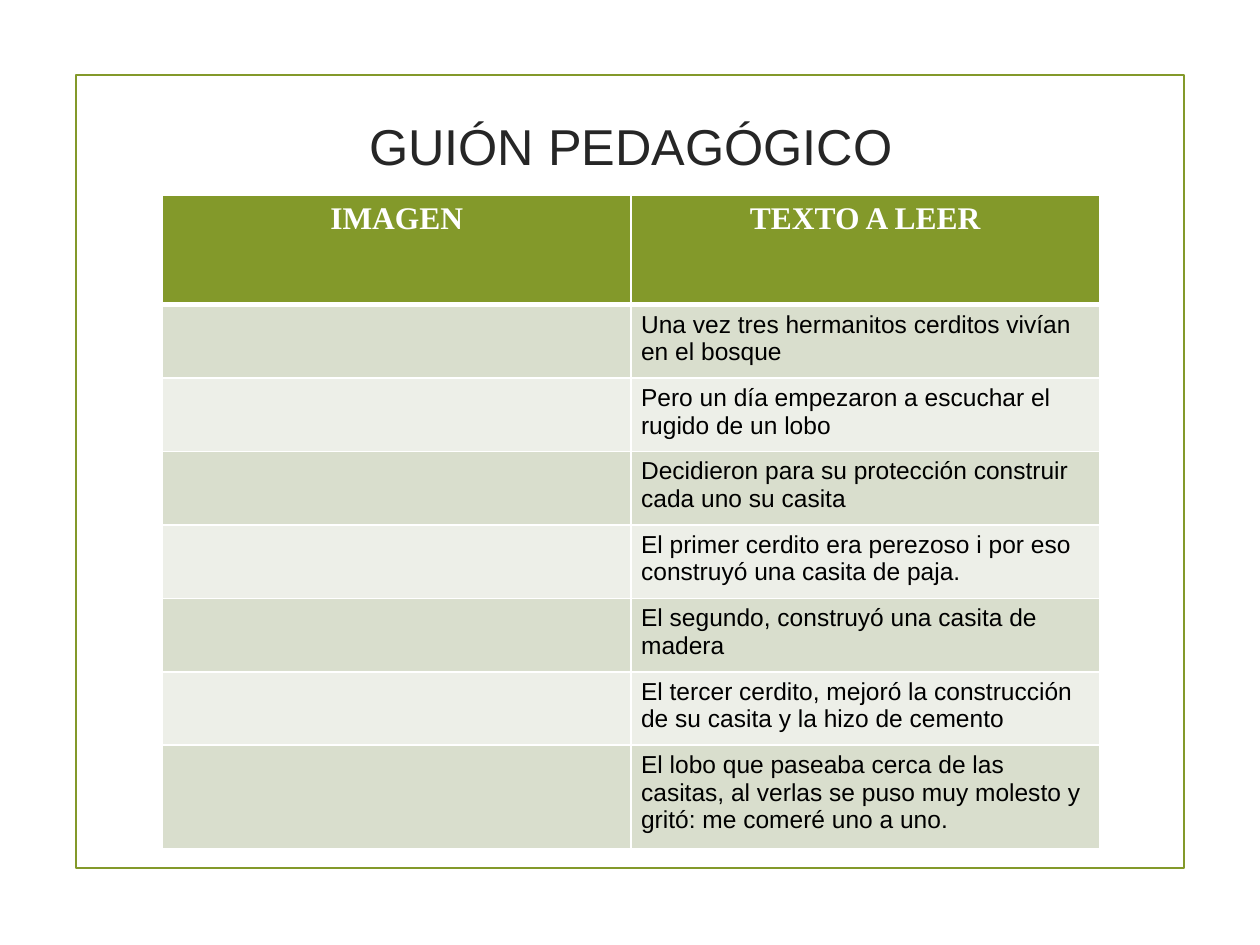
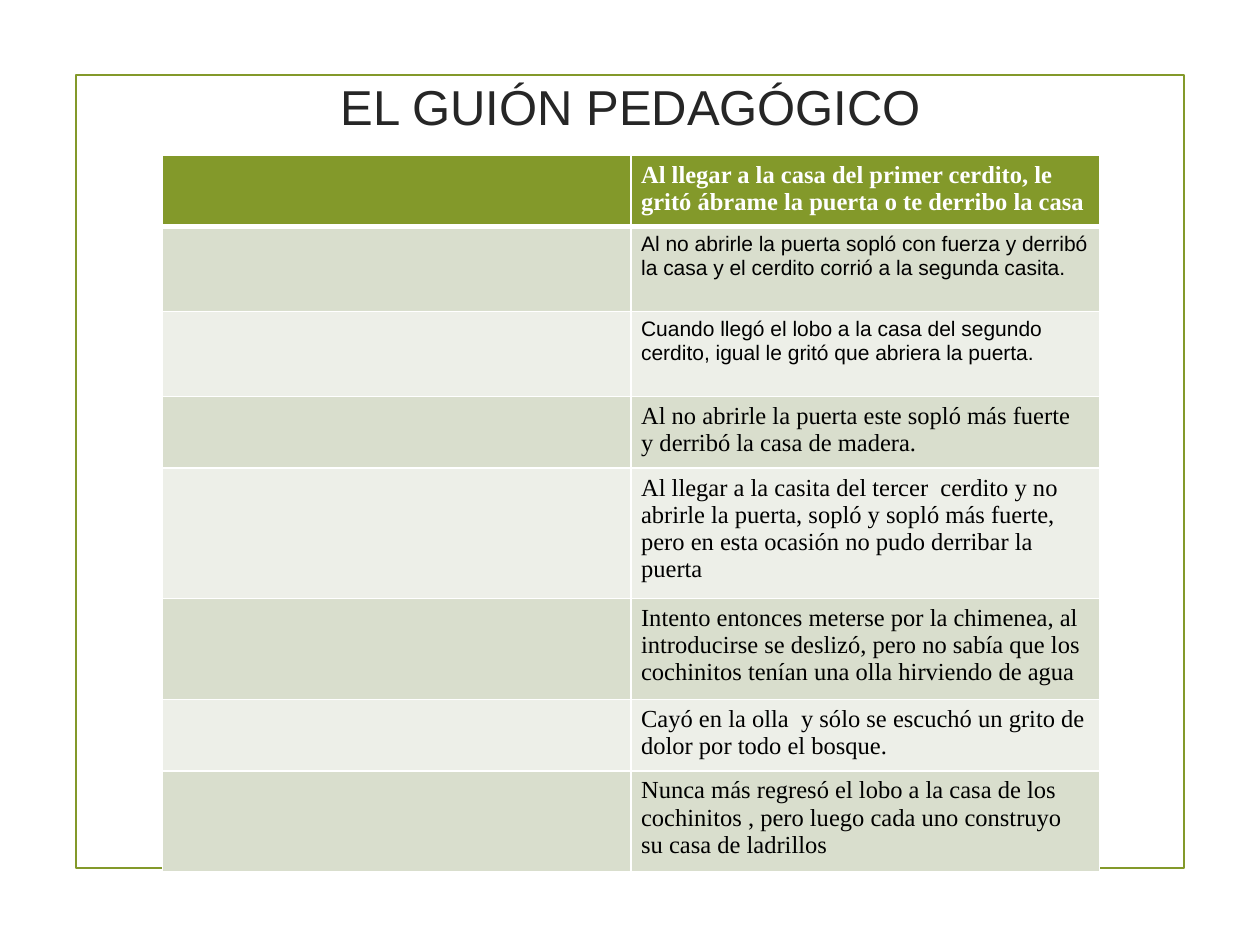
from lxml import etree
from pptx import Presentation
from pptx.dml.color import RGBColor
from pptx.enum.shapes import MSO_SHAPE
from pptx.enum.text import MSO_ANCHOR, PP_ALIGN
from pptx.oxml.ns import qn
from pptx.util import Pt

CENTER = PP_ALIGN.CENTER
LEFT = PP_ALIGN.LEFT
MIDDLE = MSO_ANCHOR.MIDDLE
RECTANGLE = MSO_SHAPE.RECTANGLE

GREEN = "83992A"
DARK_BAND = "D9DECD"
LIGHT_BAND = "EDEFE8"
WHITE = "FFFFFF"
BLACK = "000000"
TITLE_COLOR = "262626"
SANS = "Arial"
SERIF = "Times New Roman"

FRAME_BOX = (43.5, 42.75, 633, 453.25)
CONTENT_LEFT, CONTENT_WIDTH = 92.9, 535.4

SCRIPT_START = {
    "title": "GUIÓN PEDAGÓGICO",
    "title_size": 28.8,
    "title_top": 72,
    "title_height": 22.3,
    "table_top": 111.5,
    "heights": [62.5] + [42] * 6 + [59.2],
    "rows": [
        ("IMAGEN", "TEXTO A LEER", SERIF, 18, CENTER),
        ("", "Una vez tres hermanitos cerditos vivían en el bosque", SANS, 14, LEFT),
        ("", "Pero un día empezaron a escuchar el rugido de un lobo", SANS, 14, LEFT),
        ("", "Decidieron para su protección construir cada uno su casita", SANS, 14, LEFT),
        ("", "El primer cerdito era perezoso i por eso construyó una casita de paja.", SANS, 14, LEFT),
        ("", "El segundo, construyó una casita de madera", SANS, 14, LEFT),
        ("", "El tercer cerdito, mejoró la construcción de su casita y la hizo de cemento", SANS, 14, LEFT),
        ("", "El lobo que paseaba cerca de las casitas, al verlas se puso muy molesto y gritó: "
            "me comeré uno a uno.", SANS, 14, LEFT),
    ],
}

SCRIPT_END = {
    "title": "EL GUIÓN PEDAGÓGICO",
    "title_size": 28,
    "title_top": 20.9,
    "title_height": 79.2,
    "table_top": 88.6,
    "heights": [40.5, 48.6, 48.6, 40.5, 74.5, 57.2, 40.5, 57.2],
    "rows": [
        ("", "Al llegar a la casa del primer cerdito, le gritó ábrame la puerta o te derribo la casa",
         SERIF, 14, LEFT),
        ("", "Al no abrirle la puerta sopló con fuerza y derribó la casa y el cerdito corrió "
            "a la segunda casita.", SANS, 12, LEFT),
        ("", "Cuando llegó el lobo a la casa del segundo cerdito, igual le gritó que abriera la puerta.",
         SANS, 12, LEFT),
        ("", "Al no abrirle la puerta este sopló más fuerte y derribó la casa de madera.", SERIF, 14, LEFT),
        ("", "Al llegar a la casita del tercer  cerdito y no abrirle la puerta, sopló y sopló más fuerte, "
            "pero en esta ocasión no pudo derribar la puerta", SERIF, 14, LEFT),
        ("", "Intento entonces meterse por la chimenea, al introducirse se deslizó, pero no sabía que "
            "los cochinitos tenían una olla hirviendo de agua", SERIF, 14, LEFT),
        ("", "Cayó en la olla  y sólo se escuchó un grito de dolor por todo el bosque.", SERIF, 14, LEFT),
        ("", "Nunca más regresó el lobo a la casa de los cochinitos , pero luego cada uno construyo  "
            "su casa de ladrillos", SERIF, 14, LEFT),
    ],
}


def color(hex_string):
    return RGBColor.from_string(hex_string)


def format_text(text_frame, font_name, size, hex_string, alignment, bold=False):
    for paragraph in text_frame.paragraphs:
        paragraph.alignment = alignment
        for run in paragraph.runs:
            run.font.name = font_name
            run.font.size = Pt(size)
            run.font.bold = bold
            run.font.color.rgb = color(hex_string)


def add_frame(slide, box):
    frame = slide.shapes.add_shape(RECTANGLE, *map(Pt, box))
    frame.shadow.inherit = False
    frame.fill.background()
    frame.line.color.rgb = color(GREEN)
    frame.line.width = Pt(1.25)


def add_title(slide, box, text, size):
    text_frame = slide.shapes.add_textbox(*map(Pt, box)).text_frame
    text_frame.word_wrap = True
    text_frame.vertical_anchor = MIDDLE
    text_frame.text = text
    format_text(text_frame, SANS, size, TITLE_COLOR, CENTER)


def set_borders(cell, widths):
    properties = cell._tc.get_or_add_tcPr()
    for position, (side, width) in enumerate(widths.items()):
        line = etree.Element(qn(f"a:{side}"), w=str(Pt(width)))
        fill = etree.SubElement(line, qn("a:solidFill"))
        etree.SubElement(fill, qn("a:srgbClr"), val=WHITE)
        properties.insert(position, line)


def add_script_table(slide, box, heights, rows):
    table = slide.shapes.add_table(len(rows), 2, *map(Pt, box)).table
    for column in table.columns:
        column.width = Pt(box[2] / 2)
    for row_index, (image_label, reading, font_name, size, alignment) in enumerate(rows):
        table.rows[row_index].height = Pt(heights[row_index])
        is_header = row_index == 0
        band = GREEN if is_header else (LIGHT_BAND, DARK_BAND)[row_index % 2]
        widths = {
            "lnL": 1,
            "lnR": 1,
            "lnT": 3 if row_index == 1 else 1,
            "lnB": 3 if is_header else 1,
        }
        for column_index, text in enumerate((image_label, reading)):
            cell = table.cell(row_index, column_index)
            cell.margin_left = cell.margin_right = Pt(5.8)
            cell.margin_top = cell.margin_bottom = Pt(3.6)
            cell.fill.solid()
            cell.fill.fore_color.rgb = color(band)
            set_borders(cell, widths)
            if text:
                cell.text_frame.text = text
                format_text(cell.text_frame, font_name, size,
                            WHITE if is_header else BLACK, alignment, is_header)


def add_script_slide(presentation, content):
    slide = presentation.slides.add_slide(presentation.slide_layouts[6])
    add_frame(slide, FRAME_BOX)
    title_box = (CONTENT_LEFT, content["title_top"], CONTENT_WIDTH, content["title_height"])
    add_title(slide, title_box, content["title"], content["title_size"])
    heights = content["heights"]
    table_box = (CONTENT_LEFT, content["table_top"], CONTENT_WIDTH, sum(heights))
    add_script_table(slide, table_box, heights, content["rows"])


def main():
    presentation = Presentation()
    presentation.slide_width = Pt(720)
    presentation.slide_height = Pt(540)
    for content in (SCRIPT_START, SCRIPT_END):
        add_script_slide(presentation, content)
    presentation.save("out.pptx")


if __name__ == "__main__":
    main()
